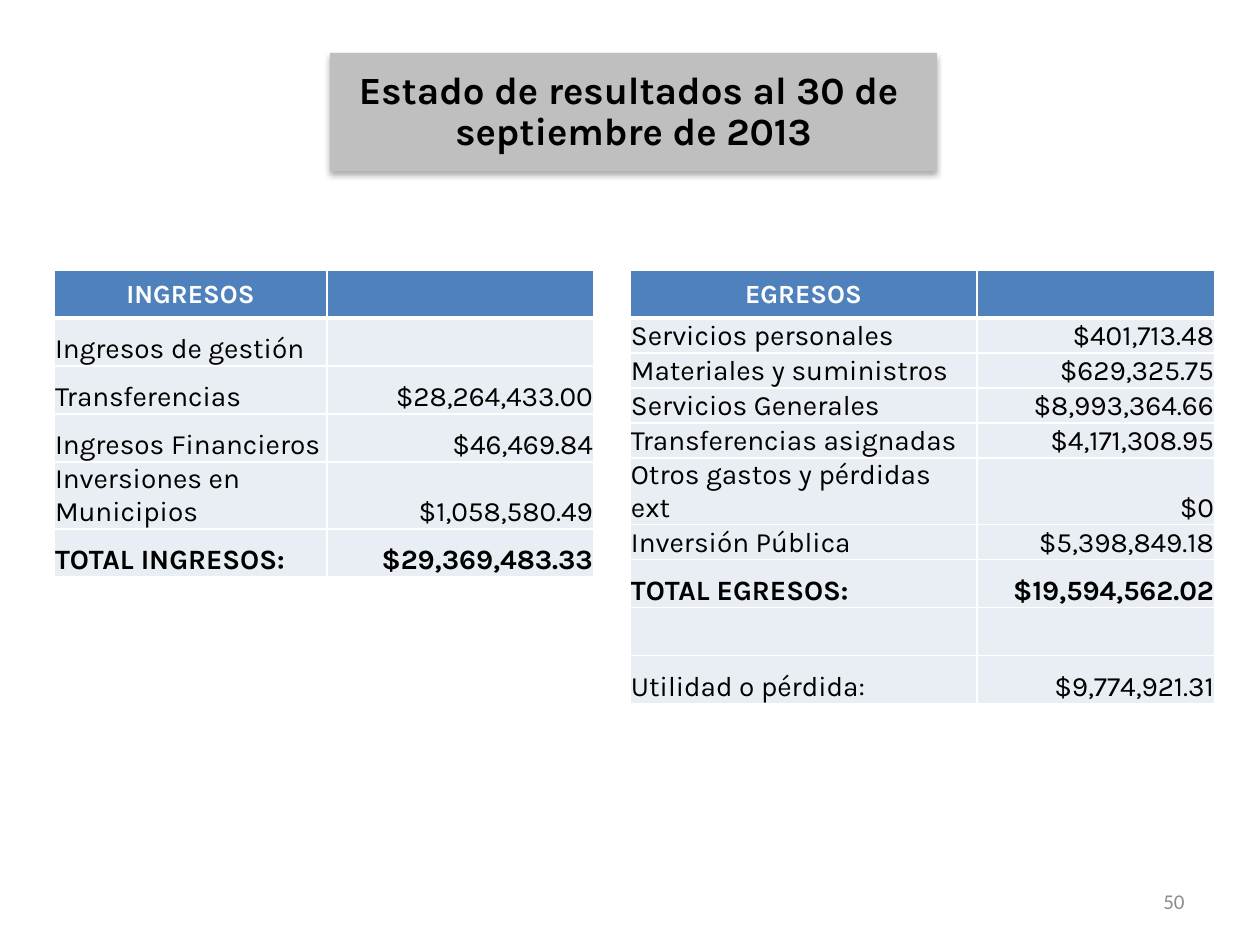
from lxml.etree import SubElement
from pptx import Presentation
from pptx.dml.color import RGBColor
from pptx.enum.shapes import MSO_SHAPE as Shape
from pptx.enum.text import MSO_ANCHOR as Anchor, MSO_AUTO_SIZE as AutoSize, PP_ALIGN as Align
from pptx.oxml import parse_xml
from pptx.oxml.ns import nsdecls, qn
from pptx.util import Emu, Pt

PX = 914400 / 126
THEME = {
    "font": "Karla", "number_font": "Calibri",
    "black": "000000", "white": "FFFFFF", "panel": "BFBFBF",
    "header": "4F81BD", "body": "E9EDF4", "number": "8C8C8C",
    "title_size": 22, "header_size": 15, "body_size": 16, "number_size": 12,
}


def px(*lengths):
    """Turn pixel lengths into a list of EMU lengths."""
    return [Emu(round(length * PX)) for length in lengths]


def write(frame, text, align, size, color, bold=False, font=THEME["font"]):
    paragraph = frame.paragraphs[0]
    paragraph.text = text
    paragraph.alignment = align
    for run in paragraph.runs:
        for name, value in {"name": font, "size": Pt(size), "bold": bold}.items():
            setattr(run.font, name, value)
        run.font.color.rgb = RGBColor.from_string(color)
    return paragraph


presentation = Presentation()
presentation.slide_width, presentation.slide_height = px(1260, 945)
slide = presentation.slides.add_slide(presentation.slide_layouts[0])
shapes = slide.shapes
subtitle = slide.placeholders[1].element
subtitle.getparent().remove(subtitle)

# Title on a shaded panel
panel = shapes.add_shape(Shape.RECTANGLE, *px(330, 53, 607, 118))
panel.fill.solid()
panel.fill.fore_color.rgb = RGBColor.from_string(THEME["panel"])
panel.line.fill.background()
panel.shadow.inherit = False
effects = panel.element.spPr.find(qn("a:effectLst"))
effects.append(parse_xml(
    f'<a:outerShdw {nsdecls("a")} blurRad="{Pt(3.5)}" dist="{Pt(2.2)}" dir="5400000" rotWithShape="0">'
    f'<a:srgbClr val="{THEME["black"]}"><a:alpha val="32000"/></a:srgbClr></a:outerShdw>'))

title = shapes.title
title.left, title.top, title.width, title.height = px(330, 66, 607, 105)
title_format = {"word_wrap": True, "auto_size": AutoSize.NONE, "vertical_anchor": Anchor.TOP}
for name, value in title_format.items():
    setattr(title.text_frame, name, value)
heading = write(title.text_frame, "Estado de resultados al 30 de \vseptiembre de 2013",
                Align.CENTER, THEME["title_size"], THEME["black"], bold=True)
heading.line_spacing = Pt(23)
shapes.element.append(title.element)  # in front of the panel

# Income and expense tables
statements = [
    {
        "left": 54, "columns": [273, 267], "heights": [48, 48, 48, 48, 67, 48],
        "rows": [
            ("INGRESOS", ""),
            ("Ingresos de gestión", ""),
            ("Transferencias", "$28,264,433.00"),
            ("Ingresos Financieros", "$46,469.84"),
            ("Inversiones en Municipios", "$1,058,580.49"),
            ("TOTAL INGRESOS:", "$29,369,483.33"),
        ],
    },
    {
        "left": 630, "columns": [347, 238], "heights": [48, 35, 35, 35, 35, 66, 35, 48, 48, 48],
        "rows": [
            ("EGRESOS", ""),
            ("Servicios personales", "$401,713.48"),
            ("Materiales y suministros", "$629,325.75"),
            ("Servicios Generales", "$8,993,364.66"),
            ("Transferencias asignadas", "$4,171,308.95"),
            ("Otros gastos y pérdidas ext", "$0"),
            ("Inversión Pública", "$5,398,849.18"),
            ("TOTAL EGRESOS:", "$19,594,562.02"),
            ("", ""),
            ("Utilidad o pérdida:", "$9,774,921.31"),
        ],
    },
]

for statement in statements:
    columns, heights, rows = statement["columns"], statement["heights"], statement["rows"]
    table = shapes.add_table(len(rows), len(columns), *px(
        statement["left"], 270, sum(columns), sum(heights))).table
    table.horz_banding = False
    for column, width in zip(table.columns, px(*columns)):
        column.width = width
    for row, height in zip(table.rows, px(*heights)):
        row.height = height

    for row_index, texts in enumerate(rows):
        is_header = row_index == 0
        is_bold = is_header or texts[0].startswith("TOTAL")
        kind = "header" if is_header else "body"
        for column_index, text in enumerate(texts):
            cell = table.cell(row_index, column_index)
            cell_format = {
                "margin_left": px(1)[0], "margin_right": px(1)[0],
                "margin_top": px(1)[0], "margin_bottom": 0,
                "vertical_anchor": Anchor.MIDDLE if is_header else Anchor.BOTTOM,
            }
            for name, value in cell_format.items():
                setattr(cell, name, value)
            align = Align.CENTER if is_header else (Align.LEFT, Align.RIGHT)[column_index]
            write(cell.text_frame, text, align, THEME[f"{kind}_size"],
                  THEME["white" if is_header else "black"], bold=is_bold)

            border_widths = {"L": 1, "R": 1, "T": 3 if row_index == 1 else 1,
                             "B": 3 if is_header else 1}
            properties = cell._tc.get_or_add_tcPr()
            for side, width in border_widths.items():
                border = SubElement(properties, qn(f"a:ln{side}"), w=str(Pt(width)))
                border_fill = SubElement(border, qn("a:solidFill"))
                SubElement(border_fill, qn("a:srgbClr"), val=THEME["white"])
            cell.fill.solid()
            cell.fill.fore_color.rgb = RGBColor.from_string(THEME[kind])

# Page number
page_number = shapes.add_textbox(*px(903, 876, 294, 50)).text_frame
page_number.word_wrap = True
page_number.vertical_anchor = Anchor.MIDDLE
write(page_number, "50", Align.RIGHT, THEME["number_size"], THEME["number"],
      font=THEME["number_font"])

presentation.save("out.pptx")
